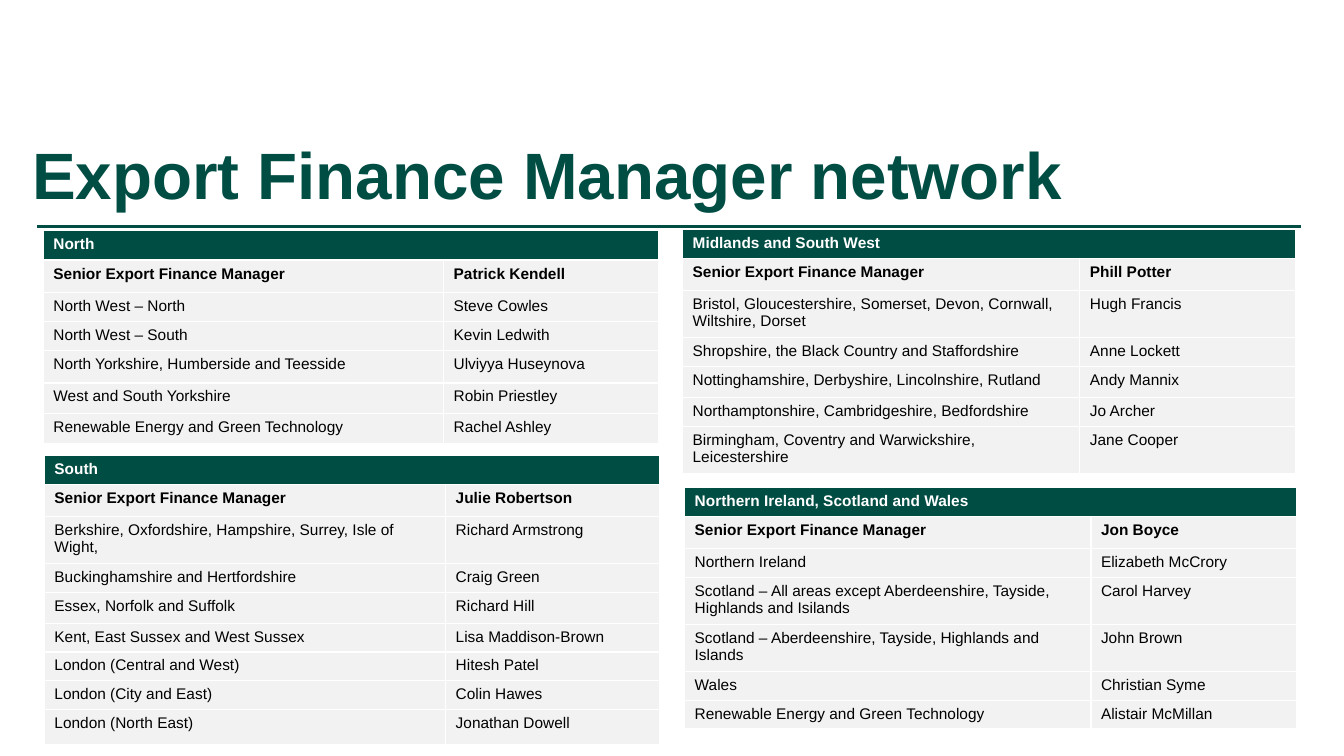
from lxml.etree import SubElement
from pptx import Presentation
from pptx.dml.color import RGBColor
from pptx.enum.shapes import MSO_CONNECTOR
from pptx.enum.text import MSO_ANCHOR
from pptx.oxml.ns import qn
from pptx.util import Inches, Pt

GREEN = RGBColor(0x00, 0x4D, 0x44)
GREY = RGBColor(0xF2, 0xF2, 0xF2)
WHITE = RGBColor(0xFF, 0xFF, 0xFF)
BLACK = RGBColor(0x00, 0x00, 0x00)
FONT = "Arial"

TITLE = "Export Finance Manager network"
ROLE = "Senior Export Finance Manager"

# Row heights in inches
ONE_LINE, TWO_LINES, LEAD = 0.27, 0.44, 0.32

# Each region: name, (left, top), column widths, header height, lead, (area, manager, row height)
REGIONS = [
    ("Northern Ireland, Scotland and Wales", (6.79, 4.84), (4.03, 2.04), ONE_LINE, "Jon Boyce", [
        ("Northern Ireland", "Elizabeth McCrory", ONE_LINE),
        ("Scotland – All areas except Aberdeenshire, Tayside, Highlands and Isilands",
         "Carol Harvey", TWO_LINES),
        ("Scotland – Aberdeenshire, Tayside, Highlands and Islands", "John Brown", TWO_LINES),
        ("Wales", "Christian Syme", ONE_LINE),
        ("Renewable Energy and Green Technology", "Alistair McMillan", ONE_LINE),
    ]),
    ("North", (0.43, 2.29), (3.97, 2.13), 0.29, "Patrick Kendell", [
        ("North West – North", "Steve Cowles", 0.29),
        ("North West – South", "Kevin Ledwith", 0.29),
        ("North Yorkshire, Humberside and Teesside", "Ulviyya Huseynova", 0.32),
        ("West and South Yorkshire", "Robin Priestley", 0.3),
        ("Renewable Energy and Green Technology", "Rachel Ashley", 0.3),
    ]),
    ("Midlands and South West", (6.77, 2.28), (3.94, 2.14), ONE_LINE, "Phill Potter", [
        ("Bristol, Gloucestershire, Somerset, Devon, Cornwall, Wiltshire, Dorset",
         "Hugh Francis", TWO_LINES),
        ("Shropshire, the Black Country and Staffordshire", "Anne Lockett", ONE_LINE),
        ("Nottinghamshire, Derbyshire, Lincolnshire, Rutland", "Andy Mannix", 0.31),
        ("Northamptonshire, Cambridgeshire, Bedfordshire", "Jo Archer", ONE_LINE),
        ("Birmingham, Coventry and Warwickshire, Leicestershire", "Jane Cooper", TWO_LINES),
    ]),
    ("South", (0.44, 4.52), (3.98, 2.12), ONE_LINE, "Julie Robertson", [
        ("Berkshire, Oxfordshire, Hampshire, Surrey, Isle of Wight,",
         "Richard Armstrong", TWO_LINES),
        ("Buckinghamshire and Hertfordshire", "Craig Green", ONE_LINE),
        ("Essex, Norfolk and Suffolk", "Richard Hill", 0.31),
        ("Kent, East Sussex and West Sussex", "Lisa Maddison-Brown", ONE_LINE),
        ("London (Central and West)", "Hitesh Patel", ONE_LINE),
        ("London (City and East)", "Colin Hawes", 0.28),
        ("London (North East)", "Jonathan Dowell", 0.35),
    ]),
]


def set_font(paragraph, size, color, bold):
    font = paragraph.font
    font.name, font.size, font.bold = FONT, Pt(size), bold
    font.color.rgb = color


def add_rule(slide):
    y = Inches(2.25)
    rule = slide.shapes.add_connector(MSO_CONNECTOR.STRAIGHT, Inches(0.37), y, Inches(12.9), y)
    rule.line.color.rgb = GREEN
    rule.line.width = Pt(2.25)
    SubElement(rule._element.spPr, qn("a:effectLst"))


def add_title(slide):
    box = slide.shapes.add_textbox(Inches(0.22), Inches(1.04), Inches(11.53), Inches(1.45))
    frame = box.text_frame
    frame.word_wrap = True
    frame.vertical_anchor = MSO_ANCHOR.MIDDLE
    paragraph = frame.paragraphs[0]
    paragraph.text = TITLE
    paragraph.line_spacing = 0.9
    set_font(paragraph, 46.8, GREEN, True)


def style_cell(cell, fill, color, bold):
    properties = cell._tc.get_or_add_tcPr()
    for side in ("a:lnL", "a:lnR", "a:lnT", "a:lnB"):
        border = SubElement(properties, qn(side), w=str(Pt(1)))
        solid = SubElement(border, qn("a:solidFill"))
        SubElement(solid, qn("a:srgbClr"), val=str(WHITE))
    cell.fill.solid()
    cell.fill.fore_color.rgb = fill
    set_font(cell.text_frame.paragraphs[0], 11, color, bold)


def add_region(slide, name, corner, widths, header_height, lead, managers):
    rows = [(name, "", header_height), (ROLE, lead, LEAD), *managers]
    left, top = corner
    height = sum(row[-1] for row in rows)
    table = slide.shapes.add_table(len(rows), len(widths), Inches(left), Inches(top),
                                   Inches(sum(widths)), Inches(height)).table
    for column, width in zip(table.columns, widths):
        column.width = Inches(width)
    for index, (area, manager, row_height) in enumerate(rows):
        table.rows[index].height = Inches(row_height)
        is_header = index == 0
        for cell, text in zip(table.rows[index].cells, (area, manager)):
            cell.text = text
            style_cell(cell, GREEN if is_header else GREY,
                       WHITE if is_header else BLACK, index < 2)
    table.cell(0, 0).merge(table.cell(0, 1))


def main():
    presentation = Presentation()
    presentation.slide_width = Inches(13.33)
    presentation.slide_height = Inches(7.5)
    slide = presentation.slides.add_slide(presentation.slide_layouts[6])
    add_rule(slide)
    add_title(slide)
    for region in REGIONS:
        add_region(slide, *region)
    presentation.save("out.pptx")


if __name__ == "__main__":
    main()
